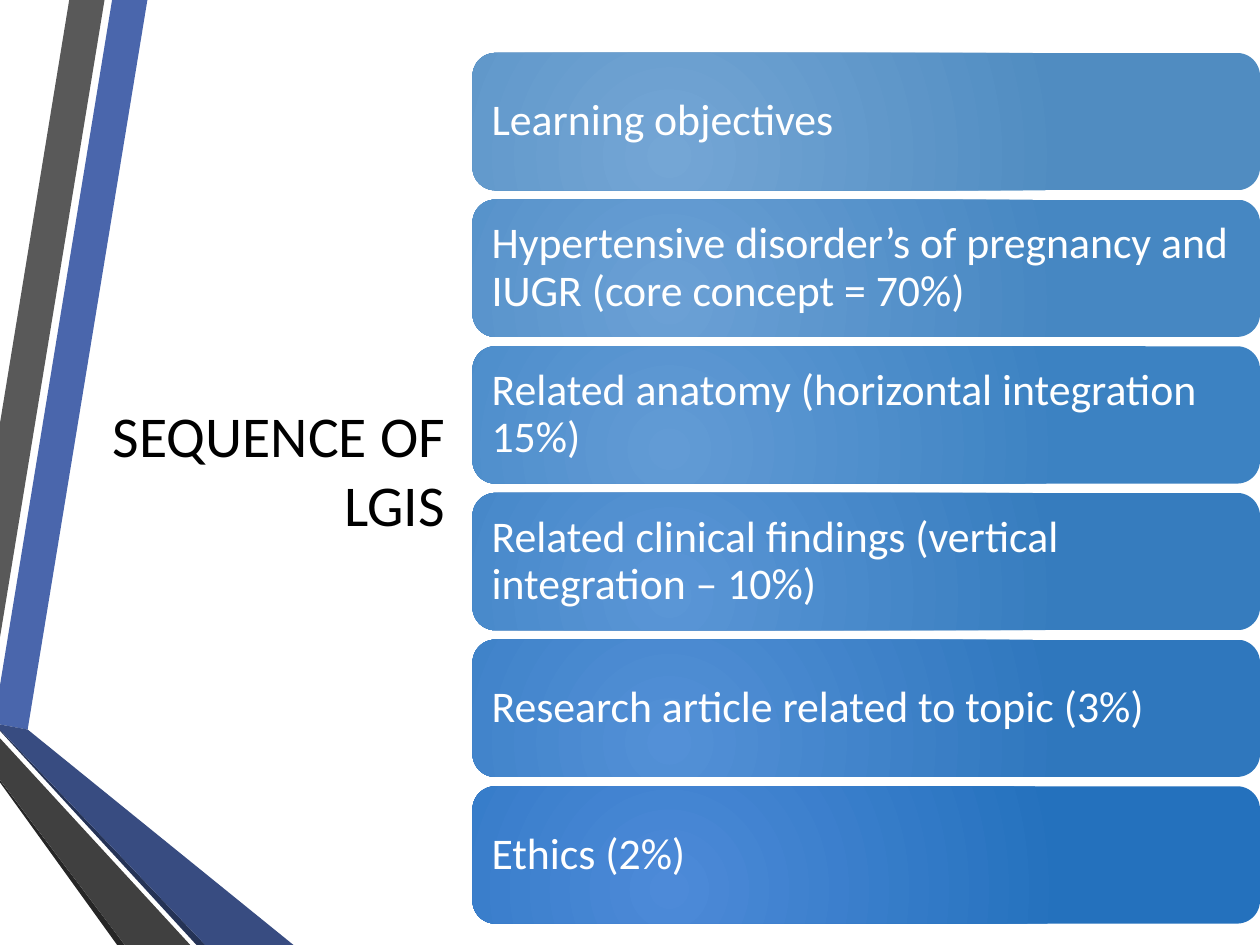
from lxml import etree
from pptx import Presentation
from pptx.dml.color import RGBColor
from pptx.enum.shapes import MSO_SHAPE
from pptx.enum.text import MSO_ANCHOR, PP_ALIGN
from pptx.oxml.ns import qn
from pptx.util import Inches, Pt

FONT = "Calibri"
BLACK = RGBColor(0x00, 0x00, 0x00)
WHITE = RGBColor(0xFF, 0xFF, 0xFF)
BLUE = RGBColor(0x4A, 0x66, 0xAC)
NAVY = RGBColor(0x38, 0x4C, 0x81)
DARK_NAVY = RGBColor(0x25, 0x33, 0x56)
GREY = RGBColor(0x59, 0x59, 0x59)
DARK_GREY = RGBColor(0x40, 0x40, 0x40)
CHARCOAL = RGBColor(0x26, 0x26, 0x26)

# Ribbon colour and corner points in inches, from back to front
RIBBONS = [
    (BLUE, [(0, 5.44), (0, 5.75), (0.22, 5.79), (1.17, 0), (0.89, 0)]),
    (GREY, [(0.83, 0), (0.55, 0), (0, 3.36), (0, 5.06)]),
    (CHARCOAL, [(0, 6.19), (0, 6.21), (0.93, 7.5), (0.99, 7.5)]),
    (DARK_NAVY, [(0, 5.79), (0, 5.8), (1.56, 7.5), (1.63, 7.5)]),
    (NAVY, [(0, 5.79), (1.63, 7.5), (2.33, 7.5), (0.22, 5.79), (0, 5.75)]),
    (DARK_GREY, [(0, 6.19), (0.99, 7.5), (1.51, 7.5), (0, 5.86)]),
]

# Step wording, gradient centre colour, gradient edge colour
STEPS = [
    ("Learning objectives",
     RGBColor(0x74, 0xA6, 0xD5), RGBColor(0x50, 0x8C, 0xC1)),
    ("Hypertensive disorder’s of pregnancy and IUGR (core concept = 70%)",
     RGBColor(0x6B, 0xA0, 0xD5), RGBColor(0x46, 0x87, 0xC2)),
    ("Related anatomy (horizontal integration 15%)",
     RGBColor(0x62, 0x9B, 0xD5), RGBColor(0x3C, 0x82, 0xC2)),
    ("Related clinical findings (vertical integration – 10%)",
     RGBColor(0x5A, 0x96, 0xD6), RGBColor(0x36, 0x7C, 0xBE)),
    ("Research article related to topic (3%)",
     RGBColor(0x53, 0x90, 0xD7), RGBColor(0x2F, 0x77, 0xBD)),
    ("Ethics (2%)",
     RGBColor(0x4D, 0x8A, 0xD8), RGBColor(0x24, 0x71, 0xBD)),
]


def write_text(shape, text, size, color, align=PP_ALIGN.LEFT,
               line_spacing=1.0, inset_y=0.05):
    frame = shape.text_frame
    frame.word_wrap = True
    frame.vertical_anchor = MSO_ANCHOR.MIDDLE
    frame.margin_left = frame.margin_right = Inches(0.1)
    frame.margin_top = frame.margin_bottom = Inches(inset_y)
    paragraph = frame.paragraphs[0]
    paragraph.alignment = align
    paragraph.line_spacing = line_spacing
    run = paragraph.add_run()
    run.text = text
    run.font.name = FONT
    run.font.size = Pt(size)
    run.font.color.rgb = color


def fill_radial(shape, centre, edge):
    """Fill with a circular gradient that spreads from the lower middle."""
    shape.fill.gradient()
    for stop, color in zip(shape.fill.gradient_stops, (centre, edge)):
        stop.color.rgb = color
    gradient = shape._element.spPr.find(qn("a:gradFill"))
    gradient.remove(gradient.find(qn("a:lin")))
    circle = etree.SubElement(gradient, qn("a:path"), path="circle")
    etree.SubElement(circle, qn("a:fillToRect"),
                     l="50000", t="100000", r="100000", b="50000")


def add_ribbons(slide, left, top):
    for color, corners in RIBBONS:
        points = [(left + Inches(x), top + Inches(y)) for x, y in corners]
        builder = slide.shapes.build_freeform(*points[0])
        builder.add_line_segments(points[1:], close=True)
        ribbon = builder.convert_to_shape()
        ribbon.shadow.inherit = False
        ribbon.fill.solid()
        ribbon.fill.fore_color.rgb = color
        ribbon.line.fill.background()


def add_title(slide, left, top, width, height):
    title = slide.shapes.add_textbox(left, top, width, height)
    write_text(title, "SEQUENCE OF LGIS", size=33, color=BLACK,
               align=PP_ALIGN.RIGHT)


def add_steps(slide, left, top, width, height):
    """Stack the steps with equal gaps so that they fill the box."""
    step_height = Inches(1.09)
    pitch = (height - step_height) / (len(STEPS) - 1)
    for row, (text, centre, edge) in enumerate(STEPS):
        step = slide.shapes.add_shape(
            MSO_SHAPE.ROUNDED_RECTANGLE,
            left, top + round(row * pitch), width, step_height)
        step.shadow.inherit = False
        step.line.fill.background()
        fill_radial(step, centre, edge)
        write_text(step, text, size=25, color=WHITE,
                   line_spacing=0.9, inset_y=0.1)


def main():
    deck = Presentation()
    deck.slide_width, deck.slide_height = Inches(10), Inches(7.5)
    slide = deck.slides.add_slide(deck.slide_layouts[6])
    add_ribbons(slide, Inches(0), Inches(0))
    add_title(slide, Inches(0.56), Inches(2.63), Inches(3.07), Inches(2.18))
    add_steps(slide, Inches(3.75), Inches(0.42), Inches(6.25), Inches(6.91))
    deck.save("out.pptx")


if __name__ == "__main__":
    main()
